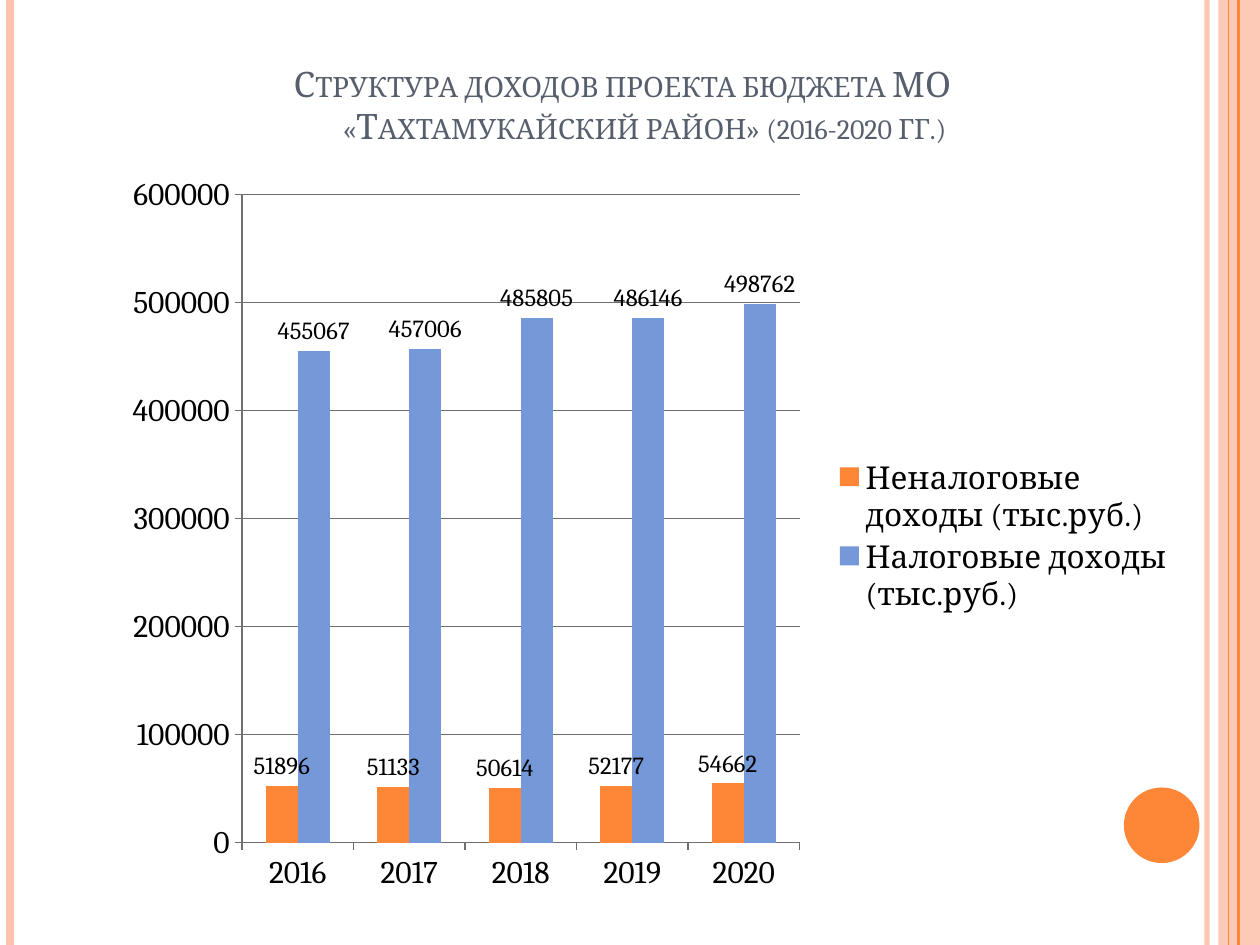
from dataclasses import dataclass

from lxml.etree import SubElement
from pptx import Presentation
from pptx.chart.data import CategoryChartData
from pptx.dml.color import RGBColor
from pptx.enum.chart import (XL_CHART_TYPE, XL_LABEL_POSITION,
                             XL_LEGEND_POSITION, XL_TICK_MARK)
from pptx.enum.shapes import MSO_CONNECTOR, MSO_SHAPE
from pptx.enum.text import MSO_ANCHOR, MSO_AUTO_SIZE, PP_ALIGN
from pptx.oxml import parse_xml
from pptx.oxml.ns import nsdecls, qn
from pptx.util import Inches, Pt


@dataclass(frozen=True)
class Theme:
    font: str = "Cambria"
    orange: str = "FE8637"
    peach: str = "FEC3AE"
    blue: str = "7598D9"
    slate: str = "575F6D"
    black: str = "000000"
    grid: str = "6F6F6F"
    head: int = 20
    axis: int = 18
    label: int = 14


THEME = Theme()
TITLE = "Структура доходов проекта бюджета МО «Тахтамукайский район» (2016-2020 гг.)"
YEARS = ["2016", "2017", "2018", "2019", "2020"]
INCOME = [
    ("Неналоговые доходы (тыс.руб.)", THEME.orange,
     [51896, 51133, 50614, 52177, 54662]),
    ("Налоговые доходы (тыс.руб.)", THEME.blue,
     [455067, 457006, 485805, 486146, 498762]),
]
# x, colour, width in points, opacity in percent
RULES = [
    (9.58, THEME.peach, 3, 93),
    (0.08, THEME.peach, 4.5, 100),
    (9.83, THEME.orange, 1.5, 100),
    (9.75, THEME.orange, 0.75, 100),
]


def apply(item, **values):
    for name, value in values.items():
        setattr(item, name, value)


def style(font, size, color):
    apply(font, name=THEME.font, size=Pt(size), bold=False)
    font.color.rgb = RGBColor.from_string(color)


def paint(fill, color, alpha=100):
    fill.solid()
    fill.fore_color.rgb = RGBColor.from_string(color)
    if alpha < 100:
        tint = fill._xPr.find(".//" + qn("a:srgbClr"))
        SubElement(tint, qn("a:alpha"), val=str(alpha * 1000))


def add_rule(slide, x, color, width, alpha):
    rule = slide.shapes.add_connector(
        MSO_CONNECTOR.STRAIGHT, Inches(x), 0, Inches(x), Inches(7.5))
    rule.line.width = Pt(width)
    paint(rule.line.fill, color, alpha)
    SubElement(rule._element.spPr, qn("a:effectLst"))


def add_block(slide, kind, box, color, alpha=100):
    block = slide.shapes.add_shape(kind, *map(Inches, box))
    block.shadow.inherit = False
    paint(block.fill, color, alpha)
    block.line.fill.background()


def set_title(slide):
    title = slide.shapes.title
    apply(title, left=Inches(1.38), top=Inches(0.29),
          width=Inches(7.12), height=Inches(1.25))
    frame = title.text_frame
    apply(frame, word_wrap=True, auto_size=MSO_AUTO_SIZE.NONE,
          vertical_anchor=MSO_ANCHOR.BOTTOM, margin_bottom=Inches(0.38))
    para = frame.paragraphs[0]
    para.alignment = PP_ALIGN.CENTER
    # Hanging indent
    props = para._p.get_or_add_pPr()
    props.set("marL", str(Inches(0.35)))
    props.set("indent", str(Inches(-0.35)))
    run = para.add_run()
    run.text = TITLE
    style(run.font, THEME.head, THEME.slate)
    run._r.get_or_add_rPr().set("cap", "small")


def make_layout(inner=False, **box):
    target = '<c:layoutTarget val="inner"/>' if inner else ""
    modes = "".join(f'<c:{k}Mode val="edge"/>' for k in "xy")
    sizes = "".join(f'<c:{k} val="{v}"/>' for k, v in box.items())
    return parse_xml(f'<c:layout {nsdecls("c")}><c:manualLayout>{target}'
                     f'{modes}{sizes}</c:manualLayout></c:layout>')


def set_axis(axis, grid):
    apply(axis, major_tick_mark=XL_TICK_MARK.OUTSIDE,
          minor_tick_mark=XL_TICK_MARK.NONE, has_major_gridlines=grid)
    lines = [axis.format.line]
    if grid:
        lines.append(axis.major_gridlines.format.line)
    for line in lines:
        line.width = Pt(0.75)
        paint(line.fill, THEME.grid)
    style(axis.tick_labels.font, THEME.axis, THEME.black)


def add_bars(slide):
    data = CategoryChartData(number_format="General")
    data.categories = YEARS
    for name, _, vals in INCOME:
        data.add_series(name, vals)
    box = map(Inches, (0.9, 1.31, 8.51, 5.91))
    chart = slide.shapes.add_chart(
        XL_CHART_TYPE.COLUMN_CLUSTERED, *box, data).chart
    apply(chart, has_title=False, has_legend=True)
    style(chart.font, THEME.axis, THEME.black)

    # Axes
    set_axis(chart.category_axis, False)
    set_axis(chart.value_axis, True)
    apply(chart.value_axis, minimum_scale=0, maximum_scale=600000,
          major_unit=100000)

    # Columns and their values
    plot = chart.plots[0]
    apply(plot, gap_width=150, overlap=0, vary_by_categories=False)
    for bars, (_, color, _) in zip(plot.series, INCOME):
        paint(bars.format.fill, color)
        labels = bars.data_labels
        apply(labels, show_value=True, position=XL_LABEL_POSITION.OUTSIDE_END)
        style(labels.font, THEME.label, THEME.black)

    # Plot area and legend
    legend = chart.legend
    apply(legend, position=XL_LEGEND_POSITION.RIGHT, include_in_layout=False)
    style(legend.font, THEME.axis, THEME.black)
    area = chart._chartSpace.chart.plotArea
    for old in area.findall(qn("c:layout")):
        area.remove(old)
    area.insert(0, make_layout(True, x=0.12, y=0.04, w=0.52, h=0.87))
    key = legend._element
    for old in key.findall(qn("c:layout")):
        key.remove(old)
    key.find(qn("c:legendPos")).addnext(
        make_layout(x=0.67, y=0.39, w=0.32, h=0.22))


def main():
    deck = Presentation()
    apply(deck, slide_width=Inches(10), slide_height=Inches(7.5))
    slide = deck.slides.add_slide(deck.slide_layouts[5])

    # Side bands and disc
    add_block(slide, MSO_SHAPE.RECTANGLE, (9.67, 0, 0.33, 7.5),
              THEME.peach, 87)
    for rule in RULES:
        add_rule(slide, *rule)
    add_block(slide, MSO_SHAPE.OVAL, (8.92, 6.25, 0.6, 0.6), THEME.orange)

    # Content
    set_title(slide)
    add_bars(slide)
    deck.save("out.pptx")


if __name__ == "__main__":
    main()
